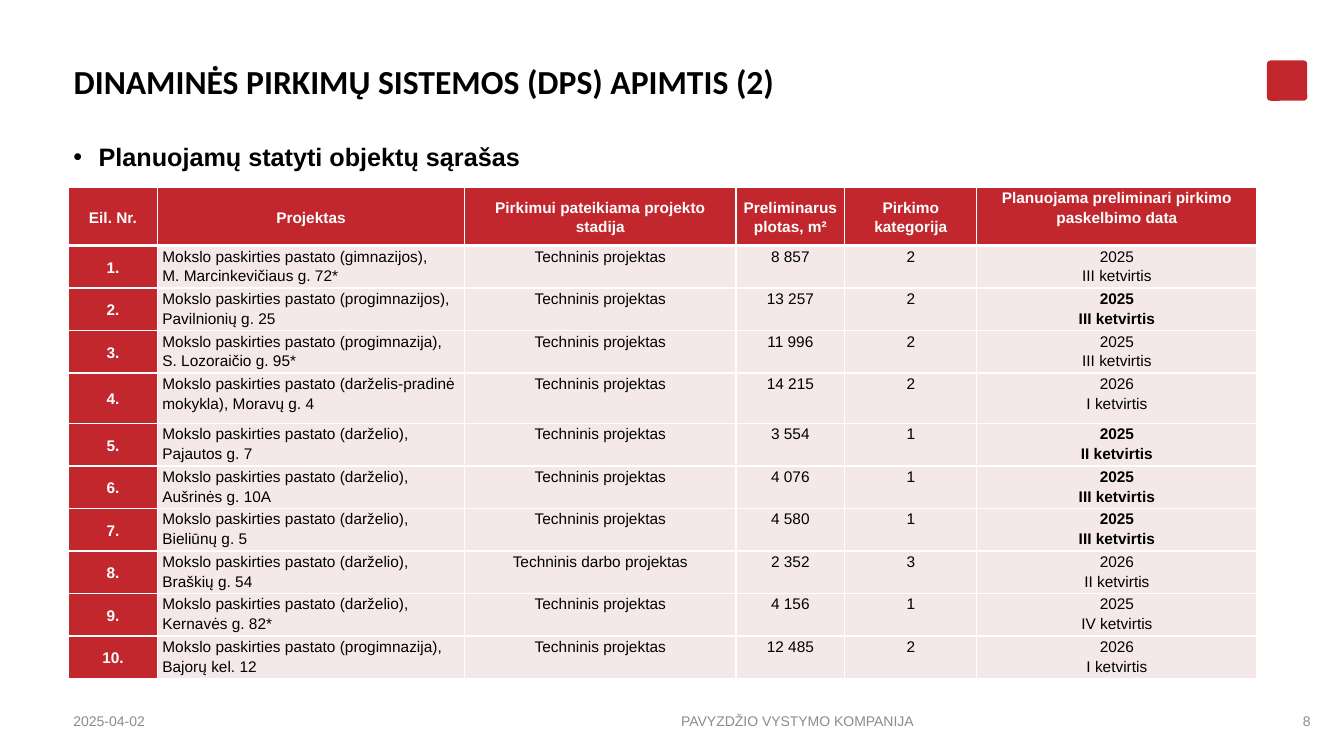
from dataclasses import dataclass
from typing import NamedTuple

from lxml.etree import SubElement
from pptx import Presentation
from pptx.dml.color import RGBColor as RGB
from pptx.enum.shapes import MSO_SHAPE as Shape
from pptx.enum.text import MSO_ANCHOR as Anchor, MSO_AUTO_SIZE as AutoSize, PP_ALIGN as Align
from pptx.oxml.ns import qn
from pptx.util import Pt


@dataclass(frozen=True)
class Theme:
    red: RGB = RGB(0xC1, 0x27, 0x2D)
    pink: RGB = RGB(0xF4, 0xE8, 0xE8)
    white: RGB = RGB(0xFF, 0xFF, 0xFF)
    black: RGB = RGB(0, 0, 0)
    grey: RGB = RGB(0x8C, 0x8C, 0x8C)
    title_font: str = "Calibri"
    body_font: str = "Arial"
    title_size: float = 24
    subtitle_size: float = 18
    table_size: float = 11
    footer_size: float = 10


class Box(NamedTuple):
    left: float
    top: float
    width: float
    height: float


class Footer(NamedTuple):
    text: str
    left: float
    width: float
    align: Align


class Project(NamedTuple):
    name: str
    area: str
    category: str
    year: str
    quarter: str
    bold_date: bool = False
    stage: str = "Techninis projektas"


THEME = Theme()
TITLE_BOX = Box(45.4, 43.2, 835.9, 90)
SUBTITLE_BOX = Box(45.4, 100.1, 835.9, 352.8)
BADGE_BOX = Box(905, 43.2, 28.8, 28.8)
TABLE_BOX = Box(49, 133.9, 849, 317)
FOOTER_TOP, FOOTER_HEIGHT = 500.4, 28.8
COLUMN_WIDTHS = [63.4, 219.6, 193.7, 77.8, 94.3, 200.2]
HEADER_HEIGHT, ROW_HEIGHT, TALL_ROW_HEIGHT = 41.5, 26.6, 36
TALL_ROW = 4
HEADERS = ["Eil. Nr.", "Projektas", "Pirkimui pateikiama projekto stadija",
           "Preliminarus plotas, m²", "Pirkimo kategorija",
           "Planuojama preliminari pirkimo paskelbimo data"]
PROJECTS = [
    Project("Mokslo paskirties pastato (gimnazijos),\nM. Marcinkevičiaus g. 72*",
            "8 857", "2", "2025", "III"),
    Project("Mokslo paskirties pastato (progimnazijos), Pavilnionių g. 25",
            "13 257", "2", "2025", "III", True),
    Project("Mokslo paskirties pastato (progimnazija), S. Lozoraičio g. 95*",
            "11 996", "2", "2025", "III"),
    Project("Mokslo paskirties pastato (darželis-pradinė mokykla), Moravų g. 4",
            "14 215", "2", "2026", "I"),
    Project("Mokslo paskirties pastato (darželio), Pajautos g. 7",
            "3 554", "1", "2025", "II", True),
    Project("Mokslo paskirties pastato (darželio), Aušrinės g. 10A",
            "4 076", "1", "2025", "III", True),
    Project("Mokslo paskirties pastato (darželio), Bieliūnų g. 5",
            "4 580", "1", "2025", "III", True),
    Project("Mokslo paskirties pastato (darželio), Braškių g. 54",
            "2 352", "3", "2026", "II", stage="Techninis darbo projektas"),
    Project("Mokslo paskirties pastato (darželio), Kernavės g. 82*",
            "4 156", "1", "2025", "IV"),
    Project("Mokslo paskirties pastato (progimnazija), Bajorų kel. 12",
            "12 485", "2", "2026", "I"),
]
FOOTERS = [
    Footer("2025-04-02", 45.4, 198.7, Align.LEFT),
    Footer("PAVYZDŽIO VYSTYMO KOMPANIJA", 257.8, 623.5, Align.CENTER),
    Footer("8", 897.1, 46.1, Align.RIGHT),
]


def in_points(box: Box) -> list:
    return [Pt(v) for v in box]


def write(tf, text: str, size: float, color: RGB, bold: bool = False,
          align: Align = Align.LEFT, spacing: float = 1.0,
          font: str = THEME.body_font) -> None:
    tf.text = text
    for p in tf.paragraphs:
        p.alignment = align
        p.line_spacing = spacing
        for r in p.runs:
            r.font.name = font
            r.font.size = Pt(size)
            r.font.bold = bold
            r.font.color.rgb = color


def add_text_box(slide, box: Box, anchor: Anchor):
    tf = slide.shapes.add_textbox(*in_points(box)).text_frame
    tf.word_wrap = True
    tf.vertical_anchor = anchor
    return tf


def add_title(slide) -> None:
    sp = slide.shapes.title
    sp.left, sp.top, sp.width, sp.height = in_points(TITLE_BOX)
    tf = sp.text_frame
    tf.auto_size = AutoSize.NONE
    tf.vertical_anchor = Anchor.TOP
    write(tf, "DINAMINĖS PIRKIMŲ SISTEMOS (DPS) APIMTIS (2)", THEME.title_size,
          THEME.black, True, spacing=0.9, font=THEME.title_font)


def add_subtitle(slide) -> None:
    tf = add_text_box(slide, SUBTITLE_BOX, Anchor.TOP)
    write(tf, "Planuojamų statyti objektų sąrašas", THEME.subtitle_size,
          THEME.black, True, spacing=0.9)
    pPr = tf.paragraphs[0]._p.get_or_add_pPr()
    pPr.set("marL", str(Pt(18)))
    pPr.set("indent", str(Pt(-18)))
    SubElement(pPr, qn("a:buFont"), typeface="Arial")
    SubElement(pPr, qn("a:buChar"), char="•")


def add_badge(slide) -> None:
    sp = slide.shapes.add_shape(Shape.ROUNDED_RECTANGLE, *in_points(BADGE_BOX))
    sp.adjustments[0] = 0.09
    sp.shadow.inherit = False
    sp.fill.solid()
    sp.fill.fore_color.rgb = THEME.red
    sp.line.fill.background()


def set_borders(cell, top: float, bottom: float) -> None:
    tcPr = cell._tc.get_or_add_tcPr()
    for side, width in (("L", 1), ("R", 1), ("T", top), ("B", bottom)):
        ln = SubElement(tcPr, qn(f"a:ln{side}"), w=str(Pt(width)))
        SubElement(SubElement(ln, qn("a:solidFill")), qn("a:srgbClr"), val=str(THEME.white))


def fill_cell(cell, text: str, row: int, col: int, bold_date: bool) -> None:
    heading = row == 0 or col == 0
    last_col = col == len(HEADERS) - 1
    set_borders(cell, 3 if row == 1 else 1, 3 if row == 0 else 1)
    cell.fill.solid()
    cell.fill.fore_color.rgb = THEME.red if heading else THEME.pink
    cell.margin_left = cell.margin_right = Pt(3.6)
    cell.margin_top = cell.margin_bottom = 0
    cell.vertical_anchor = Anchor.MIDDLE if heading and not last_col else Anchor.TOP
    write(cell.text_frame, text, THEME.table_size,
          THEME.white if heading else THEME.black,
          heading or (last_col and bold_date),
          Align.LEFT if col == 1 and row else Align.CENTER, 1.15)


def add_project_table(slide) -> None:
    table = slide.shapes.add_table(len(PROJECTS) + 1, len(HEADERS),
                                   *in_points(TABLE_BOX)).table
    table.horz_banding = False
    for column, width in zip(table.columns, COLUMN_WIDTHS):
        column.width = Pt(width)
    for row in table.rows:
        row.height = Pt(ROW_HEIGHT)
    table.rows[0].height = Pt(HEADER_HEIGHT)
    table.rows[TALL_ROW].height = Pt(TALL_ROW_HEIGHT)
    for col, text in enumerate(HEADERS):
        fill_cell(table.cell(0, col), text, 0, col, False)
    for row, item in enumerate(PROJECTS, 1):
        values = [f"{row}.", item.name, item.stage, item.area, item.category,
                  f"{item.year}\n{item.quarter} ketvirtis"]
        for col, text in enumerate(values):
            fill_cell(table.cell(row, col), text, row, col, item.bold_date)


def add_footers(slide) -> None:
    for footer in FOOTERS:
        box = Box(footer.left, FOOTER_TOP, footer.width, FOOTER_HEIGHT)
        write(add_text_box(slide, box, Anchor.MIDDLE), footer.text,
              THEME.footer_size, THEME.grey, align=footer.align)


def main() -> None:
    prs = Presentation()
    prs.slide_width, prs.slide_height = Pt(960), Pt(540)
    slide = prs.slides.add_slide(prs.slide_layouts[5])
    add_badge(slide)
    add_title(slide)
    add_subtitle(slide)
    add_footers(slide)
    add_project_table(slide)
    prs.save("out.pptx")


if __name__ == "__main__":
    main()
